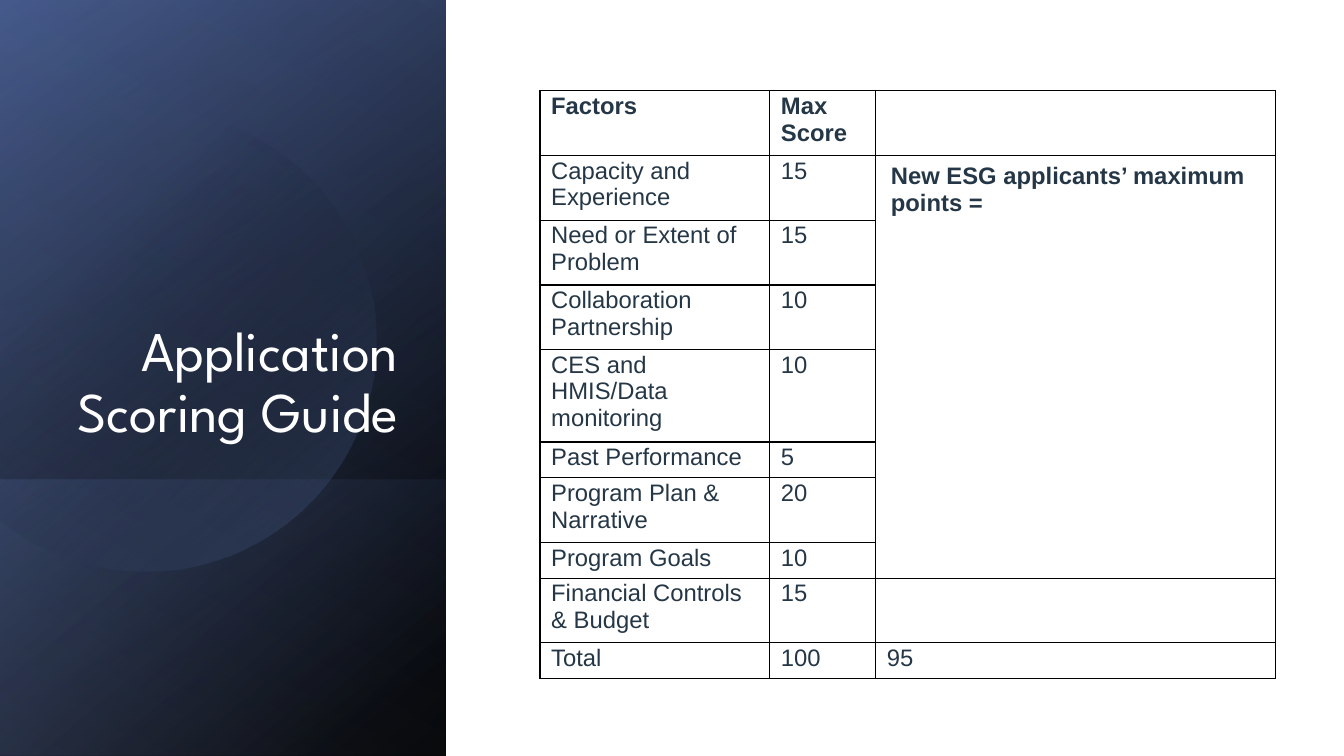
import math
from dataclasses import dataclass

from pptx import Presentation
from pptx.dml.color import RGBColor
from pptx.enum.shapes import MSO_SHAPE
from pptx.enum.text import MSO_ANCHOR, PP_ALIGN
from pptx.oxml import parse_xml
from pptx.util import Cm, Pt

RECT = MSO_SHAPE.RECTANGLE
BOTTOM = MSO_ANCHOR.BOTTOM
RIGHT = PP_ALIGN.RIGHT
NS = 'xmlns:a="http://schemas.openxmlformats.org/drawingml/2006/main"'


@dataclass(frozen=True)
class Theme:
    """Colours, fonts and type sizes of the slide."""
    black: str = "000000"
    white: str = "FFFFFF"
    navy: str = "3E507B"
    blue: str = "526BA4"
    pale: str = "95A5CA"
    ink: str = "253746"
    title_font: str = "League Spartan"
    body_font: str = "Arial"
    title_size: int = 40
    body_size: int = 17


THEME = Theme()
PANEL_W, SLIDE_H = 11.23, 19.05
COLUMNS = (5.79, 2.67, 10.08)
ONE_LINE, TWO_LINES, THREE_LINES = 0.9, 1.63, 2.33
SCORES = (
    (TWO_LINES, "Factors", "Max Score", ""),
    (TWO_LINES, "Capacity and Experience", "15", "New ESG applicants’ maximum points ="),
    (TWO_LINES, "Need or Extent of Problem", "15", ""),
    (TWO_LINES, "Collaboration Partnership", "10", ""),
    (THREE_LINES, "CES and HMIS/Data monitoring", "10", ""),
    (ONE_LINE, "Past Performance", "5", ""),
    (TWO_LINES, "Program Plan & Narrative", "20", ""),
    (ONE_LINE, "Program Goals", "10", ""),
    (TWO_LINES, "Financial Controls & Budget", "15", ""),
    (ONE_LINE, "Total", "100", "95"),
)
NOTE_ROWS = (1, 7)
NOTE_COL = 2


def paint_gradient(sp, angle, *stops):
    """Fill a shape with a linear gradient of (position, colour, opacity) stops."""
    sp.shadow.inherit = False
    sp.line.fill.background()
    sp.fill.background()
    marks = "".join(
        f'<a:gs pos="{pos * 1000}"><a:srgbClr val="{color}">'
        f'<a:alpha val="{alpha * 1000}"/></a:srgbClr></a:gs>'
        for pos, color, alpha in stops)
    grad = parse_xml(
        f'<a:gradFill {NS} rotWithShape="1"><a:gsLst>{marks}</a:gsLst>'
        f'<a:lin ang="{angle * 60000}" scaled="0"/></a:gradFill>')
    no_fill = sp._element.spPr.find("{*}noFill")
    no_fill.getparent().replace(no_fill, grad)


def add_panel(s, top, angle, *stops):
    """Add a gradient panel from the given top to the foot of the slide."""
    sp = s.shapes.add_shape(RECT, 0, Cm(top), Cm(PANEL_W), Cm(SLIDE_H - top))
    paint_gradient(sp, angle, *stops)


def add_disc(s, cx, cy, radius, angle, *stops):
    """Add a gradient disc cut off by the left edge of the slide."""
    limit = math.acos(-cx / radius)
    steps = 120
    turns = [limit * (2 * i / steps - 1) for i in range(steps + 1)]
    points = [(Cm(cx + radius * math.cos(t)), Cm(cy + radius * math.sin(t)))
              for t in turns]
    builder = s.shapes.build_freeform(*points[0])
    builder.add_line_segments(points[1:], close=True)
    paint_gradient(builder.convert_to_shape(), angle, *stops)


def style_text(p, font, size, color, bold=False):
    """Format all the runs of a paragraph."""
    for r in p.runs:
        r.font.name = font
        r.font.size = Pt(size)
        r.font.bold = bold
        r.font.color.rgb = RGBColor.from_string(color)


def add_title(s, text):
    """Add the right-aligned title over the panel."""
    sp = s.shapes.add_textbox(Cm(1.63), Cm(4.67), Cm(8.66), Cm(6.65))
    tf = sp.text_frame
    tf.word_wrap = True
    tf.vertical_anchor = BOTTOM
    tf.text = text
    p = tf.paragraphs[0]
    p.alignment = RIGHT
    p.line_spacing = 0.9
    style_text(p, THEME.title_font, THEME.title_size, THEME.white)


def add_borders(cell):
    """Draw a thin black line on each side of a cell."""
    tc_pr = cell._tc.get_or_add_tcPr()
    for i, side in enumerate(("lnL", "lnR", "lnT", "lnB")):
        tc_pr.insert(i, parse_xml(
            f'<a:{side} {NS} w="{Pt(1)}"><a:solidFill>'
            f'<a:srgbClr val="{THEME.black}"/></a:solidFill></a:{side}>'))


def fill_cell(cell, text, bold, margins):
    """Write and style one table cell."""
    side, top, bottom = margins
    cell.margin_left = cell.margin_right = Cm(side)
    cell.margin_top, cell.margin_bottom = Cm(top), Cm(bottom)
    cell.fill.solid()
    cell.fill.fore_color.rgb = RGBColor.from_string(THEME.white)
    add_borders(cell)
    p = cell.text_frame.paragraphs[0]
    p.font.size = Pt(THEME.body_size)
    if text:
        p.text = text
        style_text(p, THEME.body_font, THEME.body_size, THEME.ink, bold)


def add_score_table(s, left, top):
    """Add the scoring table with its merged note cell."""
    height = sum(row[0] for row in SCORES)
    table = s.shapes.add_table(len(SCORES), len(COLUMNS), Cm(left), Cm(top),
                               Cm(sum(COLUMNS)), Cm(height)).table
    table.first_row = table.horz_banding = False
    for column, width in zip(table.columns, COLUMNS):
        column.width = Cm(width)
    first, last = NOTE_ROWS
    for i, (row_height, *texts) in enumerate(SCORES):
        table.rows[i].height = Cm(row_height)
        for j, text in enumerate(texts):
            is_note = j == NOTE_COL and first <= i <= last
            margins = (0.38, 0.18, 0.18) if is_note else (0.28, 0.05, 0)
            fill_cell(table.cell(i, j), text, i == 0 or is_note, margins)
    table.cell(first, NOTE_COL).merge(table.cell(last, NOTE_COL))


def main():
    """Build and save the slide."""
    prs = Presentation()
    prs.slide_width, prs.slide_height = Cm(33.87), Cm(SLIDE_H)
    s = prs.slides.add_slide(prs.slide_layouts[6])
    add_panel(s, 0, 50, (0, THEME.navy, 100), (92, THEME.black, 100))
    add_panel(s, 0, 60, (1, THEME.blue, 46), (100, THEME.black, 0))
    add_panel(s, 12.09, 50, (0, THEME.blue, 29), (98, THEME.black, 30))
    add_disc(s, 3.68, 8.59, 5.82, 45, (29, THEME.black, 0), (100, THEME.blue, 43))
    add_panel(s, 0, 120, (0, THEME.black, 0), (99, THEME.pale, 11))
    add_title(s, "Application Scoring Guide")
    add_score_table(s, 13.61, 2.29)
    prs.save("out.pptx")


if __name__ == "__main__":
    main()
